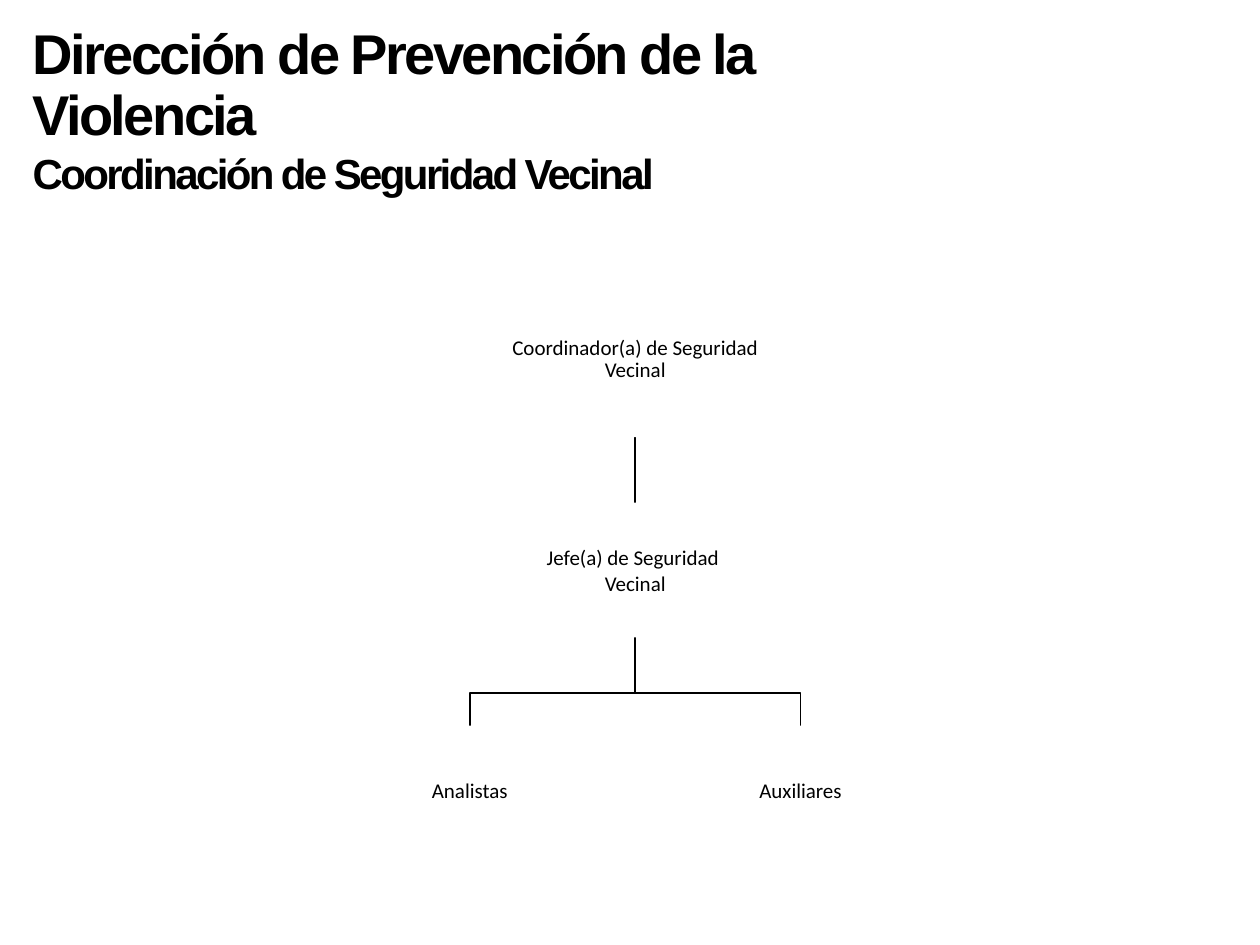
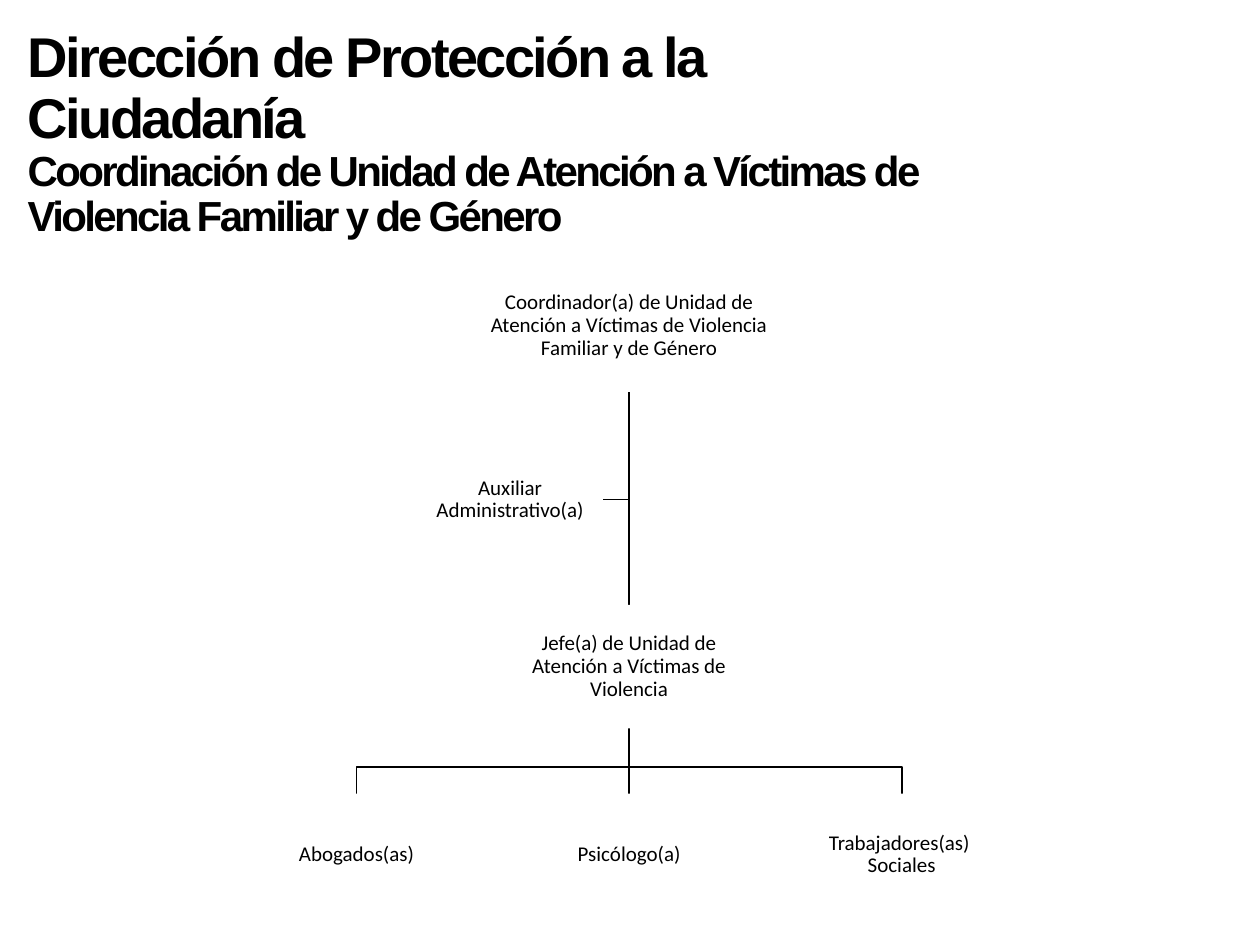
from dataclasses import dataclass

from lxml import etree
from pptx import Presentation
from pptx.dml import color
from pptx.enum import shapes, text
from pptx.oxml import ns
from pptx.util import Pt


@dataclass(frozen=True)
class Theme:
    ink: color.RGBColor = color.RGBColor(0, 0, 0)
    paper: color.RGBColor = color.RGBColor(255, 255, 255)
    title_font: str = "Arial"
    node_font: str = "Calibri"
    title_size: int = 32
    subtitle_size: int = 24
    node_size: int = 12
    tracking: float = -1.5
    tight: float = 0.9
    inset: float = 0.75
    line: float = 1


@dataclass
class Box:
    """An area in points."""
    x: float
    y: float
    w: float
    h: float

    @property
    def cx(self):
        return self.x + self.w / 2

    @property
    def cy(self):
        return self.y + self.h / 2

    @property
    def bottom(self):
        return self.y + self.h

    def lengths(self):
        return [Pt(v) for v in (self.x, self.y, self.w, self.h)]


@dataclass
class Node:
    label: str
    w: float
    h: float
    spacing: float = Theme.tight


T = Theme()


def apply(obj, values):
    for name, value in values.items():
        setattr(obj, name, value)


def set_font(r, name, size, bold=False):
    apply(r.font, {"name": name, "size": Pt(size), "bold": bold})
    r.font.color.rgb = T.ink


# Heading: direction, then coordination
def add_heading(s, box, lines):
    sp = s.shapes.title
    apply(sp, dict(zip(("left", "top", "width", "height"), box.lengths())))
    tf = sp.text_frame
    apply(tf, {"word_wrap": True, "vertical_anchor": text.MSO_ANCHOR.TOP,
               "auto_size": text.MSO_AUTO_SIZE.SHAPE_TO_FIT_TEXT})
    for i, (line, size, spacing) in enumerate(lines):
        p = tf.add_paragraph() if i else tf.paragraphs[0]
        apply(p, {"alignment": text.PP_ALIGN.LEFT, "line_spacing": spacing,
                  "space_before": Pt(0)})
        r = p.add_run()
        r.text = line
        set_font(r, T.title_font, size, bold=True)
        r.font._element.set("spc", str(int(T.tracking * 100)))


# Post in the chart: white box with centred text
def add_node(s, node, cx, y):
    box = Box(cx - node.w / 2, y, node.w, node.h)
    sp = s.shapes.add_shape(shapes.MSO_SHAPE.RECTANGLE, *box.lengths())
    sp.shadow.inherit = False
    sp.fill.solid()
    sp.fill.fore_color.rgb = T.paper
    sp.line.fill.background()
    tf = sp.text_frame
    apply(tf, {"word_wrap": True, "vertical_anchor": text.MSO_ANCHOR.MIDDLE})
    apply(tf, {f"margin_{side}": Pt(T.inset)
               for side in ("left", "top", "right", "bottom")})
    p = tf.paragraphs[0]
    p.text = node.label
    apply(p, {"alignment": text.PP_ALIGN.CENTER, "line_spacing": node.spacing})
    for r in p.runs:
        set_font(r, T.node_font, T.node_size)
    # Line breaks take the size of the text around them
    for br in p._p.findall(ns.qn("a:br")):
        etree.SubElement(br, ns.qn("a:rPr")).set("sz", str(T.node_size * 100))
    return box


# Link between posts: straight connector, or bent outline
def add_link(s, *points):
    points = [(Pt(x), Pt(y)) for x, y in points]
    if len(points) == 2:
        link = s.shapes.add_connector(shapes.MSO_CONNECTOR.STRAIGHT,
                                      *points[0], *points[1])
        etree.SubElement(link._element.spPr, ns.qn("a:effectLst"))
    else:
        path = s.shapes.build_freeform(*points[0])
        path.add_line_segments(points[1:], close=False)
        link = path.convert_to_shape()
        link.shadow.inherit = False
        link.fill.background()
    link.line.color.rgb = T.ink
    link.line.width = Pt(T.line)


# Organisation chart: head, chief, evenly spread team, optional assistant
def add_org_chart(s, box, head, chief, chief_y, team, drop, assistant=None):
    cx = box.cx
    chief_top = box.y + chief_y
    chief_bottom = chief_top + chief.h
    team_top = box.bottom - team[0].h
    bus = team_top - drop
    pitch = (box.w - team[0].w) / (len(team) - 1)
    centres = [box.x + team[0].w / 2 + i * pitch for i in range(len(team))]

    add_link(s, (cx, box.y + head.h), (cx, chief_top))
    for x in centres:
        if abs(x - cx) < 1:
            add_link(s, (cx, chief_bottom), (cx, team_top))
        else:
            add_link(s, (cx, chief_bottom), (cx, bus), (x, bus), (x, team_top))

    add_node(s, head, cx, box.y)
    add_node(s, chief, cx, chief_top)
    for node, x in zip(team, centres):
        add_node(s, node, x, team_top)

    if assistant:
        node, gap, y = assistant
        side = add_node(s, node, cx - gap - node.w / 2, box.y + y)
        add_link(s, (cx, side.cy), (cx - gap, side.cy))


def build_neighbourhood(s):
    add_heading(s, Box(11.5, 11.5, 543.6, 106), [
        ("Dirección de Prevención de la Violencia", T.title_size, T.tight),
        ("Coordinación de Seguridad Vecinal", T.subtitle_size, 1.0)])
    add_org_chart(
        s, Box(192.5, 161.3, 341, 329),
        head=Node("Coordinador(a) de Seguridad Vecinal", 177, 88.6),
        chief=Node("Jefe(a) de Seguridad \nVecinal", 150.5, 77, 1.0),
        chief_y=126,
        team=[Node(label, 152, 75.6) for label in ("Analistas", "Auxiliares")],
        drop=18.7)


def build_victim_care(s):
    add_heading(s, Box(8.6, 13, 537, 129.6), [
        ("Dirección de Protección a la Ciudadanía", T.title_size, T.tight),
        ("Coordinación de Unidad de Atención a Víctimas de Violencia "
         "Familiar y de Género", T.subtitle_size, T.tight)])
    add_org_chart(
        s, Box(140.75, 148.3, 437.5, 375),
        head=Node("Coordinador(a) de Unidad de Atención a Víctimas de "
                  "Violencia Familiar y de Género", 168.5, 75.6),
        chief=Node("Jefe(a) de Unidad de Atención a Víctimas de Violencia",
                   136, 70.6),
        chief_y=197.3,
        team=[Node(label, 126, 69.8) for label in
              ("Abogados(as)", "Psicólogo(a)", "Trabajadores(as) \nSociales")],
        drop=15,
        assistant=(Node("Auxiliar Administrativo(a)", 106, 61.2), 15, 106.6))


def main():
    prs = Presentation()
    prs.slide_width, prs.slide_height = Pt(720), Pt(540)
    title_only = prs.slide_layouts[5]
    for build in (build_neighbourhood, build_victim_care):
        build(prs.slides.add_slide(title_only))
    prs.save("out.pptx")


if __name__ == "__main__":
    main()
